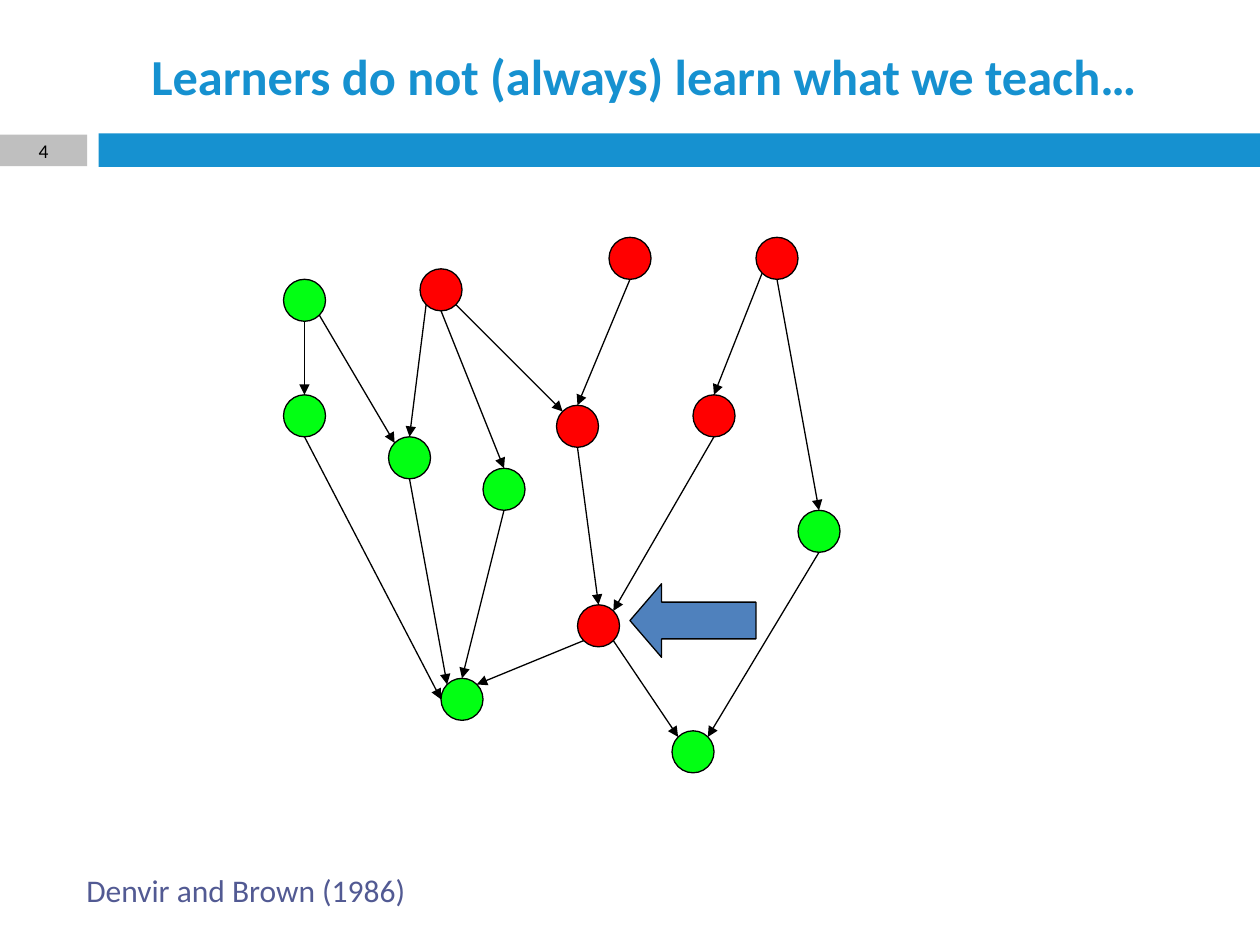
from math import cos, radians, sin

from lxml import etree
from pptx import Presentation
from pptx.dml.color import RGBColor
from pptx.enum.shapes import MSO_CONNECTOR, MSO_SHAPE
from pptx.enum.text import MSO_ANCHOR, PP_ALIGN
from pptx.oxml.ns import qn
from pptx.util import Pt

RECT, OVAL, ARROW = MSO_SHAPE.RECTANGLE, MSO_SHAPE.OVAL, MSO_SHAPE.LEFT_ARROW
LINE = MSO_CONNECTOR.STRAIGHT
TOP, MID = MSO_ANCHOR.TOP, MSO_ANCHOR.MIDDLE
LEFT, MIDDLE = PP_ALIGN.LEFT, PP_ALIGN.CENTER

RED, GREEN, BLACK = "FF0000", "02FF13", "000000"
RADIUS = 12

# Skills: name -> centre x, centre y, colour
SKILLS = {
    "A": (174, 171.6, GREEN), "B": (252, 165.6, RED),
    "C": (360, 147.6, RED), "D": (444, 147.6, RED),
    "E": (174, 237.6, GREEN), "F": (234, 261.6, GREEN),
    "G": (288, 279.6, GREEN), "H": (330, 243.6, RED),
    "I": (408, 237.6, RED), "J": (468, 303.6, GREEN),
    "K": (342, 357.6, RED), "L": (264, 399.6, GREEN),
    "M": (396, 429.6, GREEN),
}

# Compass points on a circle, in degrees clockwise from the right
SITES = {"e": 0, "se": 45, "s": 90, "sw": 135,
         "w": 180, "nw": 225, "n": 270, "ne": 315}

# Links: from skill, its site, to skill, its site
LINKS = [
    ("B", "sw", "F", "n"), ("B", "s", "G", "n"), ("B", "se", "H", "nw"),
    ("C", "s", "H", "n"), ("D", "s", "J", "n"), ("D", "sw", "I", "n"),
    ("I", "s", "K", "ne"), ("F", "s", "L", "nw"), ("G", "s", "L", "n"),
    ("H", "s", "K", "n"), ("J", "s", "M", "ne"), ("K", "se", "M", "nw"),
    ("K", "sw", "L", "ne"), ("A", "se", "F", "nw"), ("A", "s", "E", "n"),
    ("E", "s", "L", "w"),
]

# Bands: box, colour
BANDS = [((56.4, 76.2, 663.6, 19.2), "1691D0"),
         ((0, 77, 49.8, 18), "BFBFBF")]

# Texts: wording, box, side inset, anchor, alignment, colour, font
TEXTS = [
    ("Learners do not (always) learn what we teach…",
     (56.4, 18.7, 623.5, 49), 7.2, MID, MIDDLE, "1691D0",
     {"size": Pt(28.8), "bold": True}),
    ("Denvir and Brown (1986)", (42.2, 494, 200.2, 29), 7.2, TOP, LEFT,
     "525A93", {"size": Pt(18)}),
    ("4", (0, 77, 49.8, 18), 0, MID, MIDDLE, BLACK, {"size": Pt(11.1)}),
]

deck = Presentation()
deck.slide_width, deck.slide_height = Pt(720), Pt(540)
slide = deck.slides.add_slide(deck.slide_layouts[6])
shapes = slide.shapes


def color(code):
    return RGBColor.from_string(code)


def put(kind, box, fill, edge=None):
    shape = shapes.add_shape(kind, *map(Pt, box))
    shape.shadow.inherit = False
    shape.fill.solid()
    shape.fill.fore_color.rgb = color(fill)
    if edge:
        shape.line.color.rgb = color(edge)
        shape.line.width = Pt(0.75)
    else:
        shape.line.fill.background()
    return shape


def rim(skill, site):
    x, y, _ = SKILLS[skill]
    turn = radians(SITES[site])
    return Pt(x + RADIUS * cos(turn)), Pt(y + RADIUS * sin(turn))


def link(start, leave, end, enter):
    line = shapes.add_connector(LINE, *rim(start, leave), *rim(end, enter))
    line.line.color.rgb = color(BLACK)
    line.line.width = Pt(0.75)
    props = line.element.spPr
    etree.SubElement(props.find(qn("a:ln")), qn("a:tailEnd"), type="triangle")
    etree.SubElement(props, qn("a:effectLst"))


def write(words, box, inset, anchor, align, tint, style):
    frame = shapes.add_textbox(*map(Pt, box)).text_frame
    layout = {"word_wrap": True, "vertical_anchor": anchor,
              "margin_left": Pt(inset), "margin_right": Pt(inset)}
    for name, value in layout.items():
        setattr(frame, name, value)
    para = frame.paragraphs[0]
    para.alignment = align
    run = para.add_run()
    run.text = words
    for name, value in {"name": "Calibri", **style}.items():
        setattr(run.font, name, value)
    run.font.color.rgb = color(tint)


# Header bands
for box, fill in BANDS:
    put(RECT, box, fill)

# Skill network
for x, y, fill in SKILLS.values():
    put(OVAL, (x - RADIUS, y - RADIUS, 2 * RADIUS, 2 * RADIUS), fill, BLACK)
for item in LINKS:
    link(*item)

# Pointer to the taught skill
pointer = put(ARROW, (360, 333.6, 72, 42), "4F81BD", BLACK)
pointer.adjustments[1] = 0.43

# Title, source and slide number
for item in TEXTS:
    write(*item)

deck.save("out.pptx")
